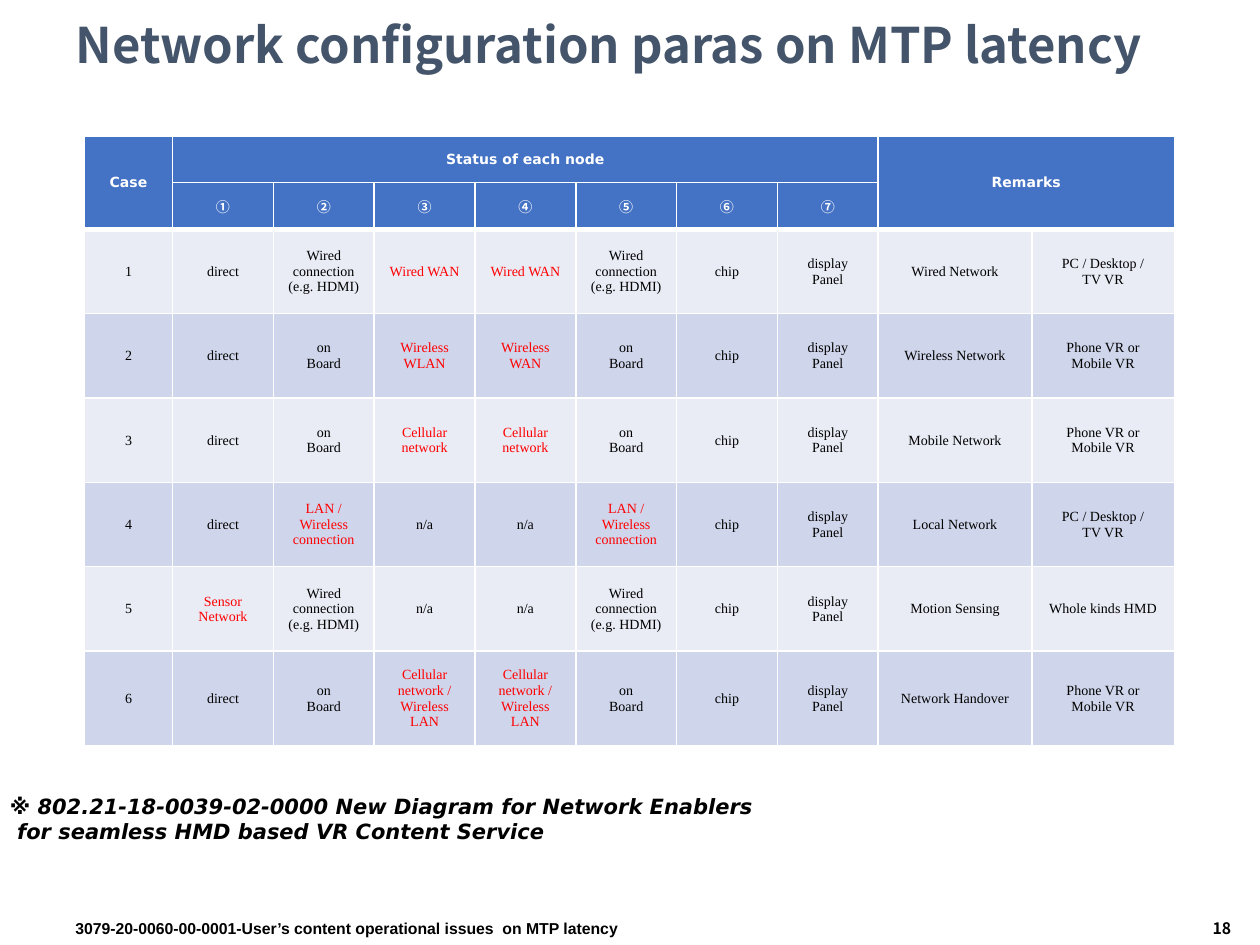
from dataclasses import dataclass

from pptx import Presentation
from pptx.dml.color import RGBColor
from pptx.enum import text
from pptx.oxml.xmlchemy import OxmlElement
from pptx.util import Pt

PX = 9144
BLACK, WHITE, RED = "000000", "FFFFFF", "FF0000"
BLUE, PALE, MID = "4472C4", "E9EBF5", "CFD5EA"
CJK, SANS, SERIF = "Noto Sans CJK KR", "DejaVu Sans", "Times New Roman"
LEFT, CENTER, RIGHT = text.PP_ALIGN.LEFT, text.PP_ALIGN.CENTER, text.PP_ALIGN.RIGHT
TOP, MIDDLE = text.MSO_ANCHOR.TOP, text.MSO_ANCHOR.MIDDLE


@dataclass(frozen=True)
class Style:
    face: str
    size: int
    hue: str = BLACK
    bold: bool = False
    slant: bool = False
    align: int = LEFT


@dataclass(frozen=True)
class Label:
    words: str
    box: tuple[int, int, int, int]
    style: Style
    wrap: bool = True
    anchor: int = MIDDLE


@dataclass(frozen=True)
class Case:
    nodes: tuple[str, ...]
    remark: str
    device: str
    hot: tuple[int, ...]


def color(code: str) -> RGBColor:
    return RGBColor.from_string(code)


def write(frame, words: str, style: Style) -> None:
    frame.text = words
    for para in frame.paragraphs:
        para.alignment = style.align
        for run in para.runs:
            font = run.font
            font.name, font.size = style.face, Pt(style.size)
            font.bold, font.italic = style.bold, style.slant
            font.color.rgb = color(style.hue)
            east = OxmlElement("a:ea")
            east.set("typeface", style.face)
            font._element.append(east)


def place(shape, label: Label) -> None:
    shape.left, shape.top, shape.width, shape.height = (n * PX for n in label.box)
    frame = shape.text_frame
    write(frame, label.words, label.style)
    frame.word_wrap = label.wrap
    frame.vertical_anchor = label.anchor


def edge(cell, side: str, width: int) -> None:
    line = OxmlElement(f"a:ln{side}")
    line.set("w", str(Pt(width)))
    fill = OxmlElement("a:solidFill")
    hue = OxmlElement("a:srgbClr")
    hue.set("val", WHITE)
    fill.append(hue)
    line.append(fill)
    cell._tc.get_or_add_tcPr().append(line)


def paint(cell, fill: str, top: int, base: int, pad: tuple[int, int]) -> None:
    for side, width in (("L", 1), ("R", 1), ("T", top), ("B", base)):
        edge(cell, side, width)
    cell.fill.solid()
    cell.fill.fore_color.rgb = color(fill)
    cell.margin_left = cell.margin_right = pad[0] * PX
    cell.margin_top = cell.margin_bottom = pad[1] * PX
    cell.vertical_anchor = MIDDLE


HEAD = Style(SANS, 8, WHITE, bold=True, align=CENTER)
NUM = Style(CJK, 8, WHITE, bold=True, align=CENTER)
BODY = Style(SERIF, 8, align=CENTER)
HOT = Style(SERIF, 8, RED, align=CENTER)

WIRED = "Wired connection\n(e.g. HDMI)"
BOARD = "on\nBoard"
CELL = "Cellular network"
MIX = "Cellular network /\nWireless\nLAN"
LAN = "LAN /\nWireless connection"
END = ("chip", "display\nPanel")
TETHER = "PC / Desktop /\nTV VR"
MOBILE = "Phone VR or\nMobile VR"

CASES = (
    Case(("direct", WIRED, "Wired WAN", "Wired WAN", WIRED), "Wired Network", TETHER, (3, 4)),
    Case(("direct", BOARD, "Wireless\nWLAN", "Wireless\nWAN", BOARD),
         "Wireless Network", MOBILE, (3, 4)),
    Case(("direct", BOARD, CELL, CELL, BOARD), "Mobile Network", MOBILE, (3, 4)),
    Case(("direct", LAN, "n/a", "n/a", LAN), "Local Network", TETHER, (2, 5)),
    Case(("Sensor\nNetwork", WIRED, "n/a", "n/a", WIRED),
         "Motion Sensing", "Whole kinds HMD", (1,)),
    Case(("direct", BOARD, MIX, MIX, BOARD), "Network Handover", MOBILE, (3, 4)),
)

TITLE = Label("Network configuration paras on MTP latency", (50, 17, 900, 67),
              Style(CJK, 28, "44546A", bold=True), anchor=TOP)
NOTES = (
    Label("※ 802.21-18-0039-02-0000 New Diagram for Network Enablers\n"
          " for seamless HMD based VR Content Service",
          (-2, 625, 621, 50), Style(SANS, 12, bold=True, slant=True), False, TOP),
    Label("3079-20-0060-00-0001-User’s content operational issues  on MTP latency",
          (50, 723, 733, 27), Style("Arial", 9, bold=True)),
    Label("18", (825, 723, 162, 27), Style(CJK, 9, bold=True, align=RIGHT)),
)
COLS = (70, *[80] * 7, 122, 113)
ROWS = (37, 37, *[67] * 5, 75)


def draw(slide) -> None:
    grid = slide.shapes.add_table(len(ROWS), len(COLS), 67 * PX, 108 * PX,
                                  sum(COLS) * PX, sum(ROWS) * PX).table
    for col, width in zip(grid.columns, COLS):
        col.width = width * PX
    for row, height in zip(grid.rows, ROWS):
        row.height = height * PX

    for r in range(len(ROWS)):
        fill = BLUE if r < 2 else (PALE, MID)[r % 2]
        for c in range(len(COLS)):
            deep = r == 1 or (r == 0 and c in (0, 8, 9))
            pad = (5, 1) if r > 1 and c > 7 else (7, 4)
            paint(grid.cell(r, c), fill, 3 if r == 2 else 1, 3 if deep else 1, pad)

    for start, stop, words in (((0, 0), (1, 0), "Case"),
                               ((0, 1), (0, 7), "Status of each node"),
                               ((0, 8), (1, 9), "Remarks")):
        grid.cell(*start).merge(grid.cell(*stop))
        write(grid.cell(*start).text_frame, words, HEAD)
    for c, mark in enumerate("①②③④⑤⑥⑦", 1):
        write(grid.cell(1, c).text_frame, mark, NUM)
    for n, case in enumerate(CASES, 1):
        items = (str(n), *case.nodes, *END, case.remark, case.device)
        for c, words in enumerate(items):
            write(grid.cell(n + 1, c).text_frame, words, HOT if c in case.hot else BODY)


def main() -> None:
    deck = Presentation()
    deck.slide_width, deck.slide_height = 1000 * PX, 750 * PX
    slide = deck.slides.add_slide(deck.slide_layouts[5])
    title = slide.shapes.title
    place(title, TITLE)
    title.text_frame.margin_top = 0
    title.text_frame.auto_size = text.MSO_AUTO_SIZE.NONE
    title.text_frame.paragraphs[0].line_spacing = 0.9
    draw(slide)
    for note in NOTES:
        place(slide.shapes.add_textbox(0, 0, PX, PX), note)
    deck.save("out.pptx")


if __name__ == "__main__":
    main()
